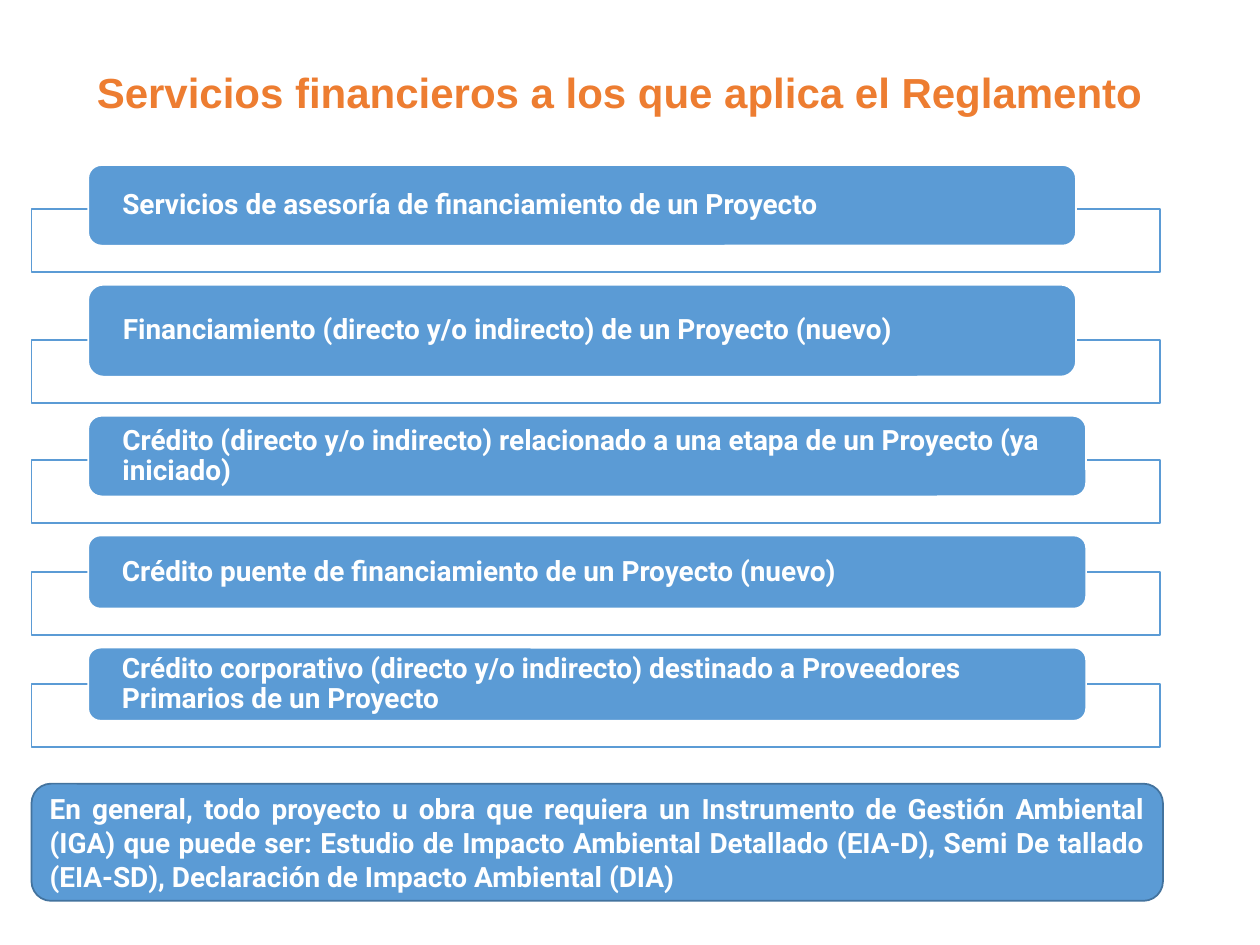
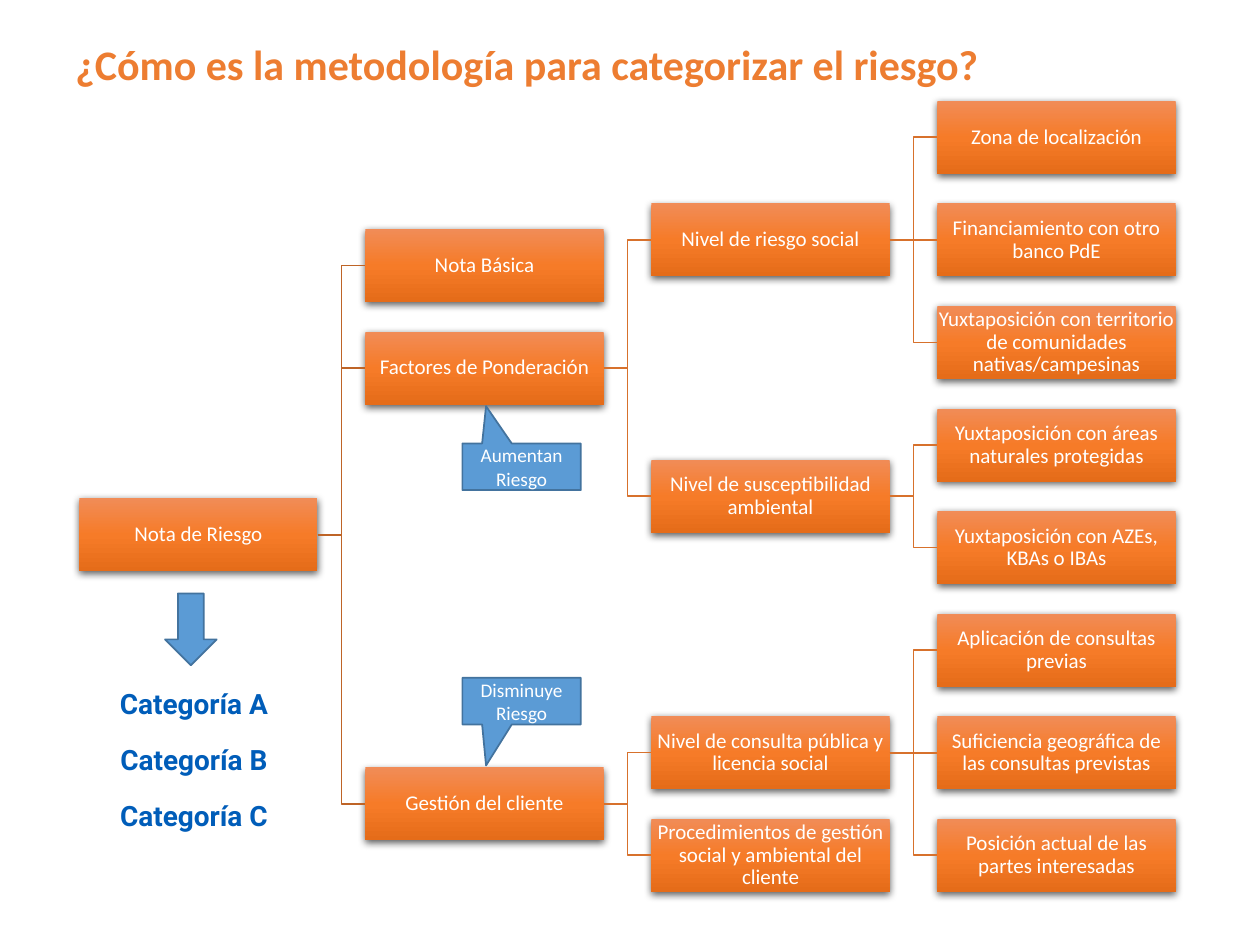
from copy import deepcopy

from lxml.etree import SubElement
from pptx import Presentation
from pptx.dml.color import RGBColor
from pptx.enum.shapes import MSO_CONNECTOR as Link, MSO_SHAPE as Shape
from pptx.enum.text import MSO_ANCHOR as Anchor, PP_ALIGN as Align
from pptx.oxml.ns import qn
from pptx.util import Inches, Pt

COLORS = {
    "title": "ED7D31", "blue": "5B9BD5", "blue_edge": "43739E",
    "white": "FFFFFF", "category": "005DB9",
    "trunk": "BE6427", "branch": "D7712C",
    "node_top": "F18C57", "node_middle": "F67B28", "node_bottom": "E56C19",
}

FORMATS = {
    "title": {"name": "Arial", "size": 24, "bold": True, "color": "title"},
    "title_tree": {"name": "Calibri", "size": 24, "bold": True, "color": "title"},
    "service": {"name": "Roboto", "size": 16, "bold": True, "color": "white"},
    "node": {"name": "Calibri", "size": 12, "bold": False, "color": "white"},
    "callout": {"name": "Calibri", "size": 11, "bold": False, "color": "white"},
    "category": {"name": "Roboto", "size": 16, "bold": True, "color": "category"},
}


def color(key):
    return RGBColor.from_string(COLORS[key])


class Deck:
    """Holds the style and the current slide; lengths are cells of a 100 x 75 grid."""

    def __init__(self):
        self.prs = Presentation()
        self.prs.slide_width, self.prs.slide_height = Inches(10), Inches(7.5)
        self.cell = self.prs.slide_width / 100

    def cells(self, *lengths):
        return [round(length * self.cell) for length in lengths]

    def new_slide(self, title, area, style="title"):
        self.slide = self.prs.slides.add_slide(self.prs.slide_layouts[6])
        self.label(title, area, style, line_spacing=0.9)

    def put_text(self, holder, text, style, align=Align.LEFT, line_spacing=1.0,
                 anchor=Anchor.MIDDLE, insets=(1, 0.5)):
        frame = holder.text_frame
        side, edge = self.cells(*insets)
        layout = {"word_wrap": True, "vertical_anchor": anchor,
                  "margin_left": side, "margin_right": side,
                  "margin_top": edge, "margin_bottom": edge}
        for key, value in layout.items():
            setattr(frame, key, value)
        paragraph = frame.paragraphs[0]
        paragraph.alignment, paragraph.line_spacing = align, line_spacing
        run = paragraph.add_run()
        run.text = text
        look = dict(FORMATS[style])
        run.font.color.rgb = color(look.pop("color"))
        look["size"] = Pt(look["size"])
        for key, value in look.items():
            setattr(run.font, key, value)

    def label(self, text, area, style, **layout):
        box = self.slide.shapes.add_textbox(*self.cells(*area))
        self.put_text(box, text, style, anchor=Anchor.TOP, **layout)

    def block(self, kind, area, fill="blue", edge="blue_edge", adjust=()):
        block = self.slide.shapes.add_shape(kind, *self.cells(*area))
        block.shadow.inherit = False
        block.fill.solid()
        block.fill.fore_color.rgb = color(fill)
        block.line.color.rgb = color(edge)
        block.line.width = Pt(1)
        for index, value in enumerate(adjust):
            block.adjustments[index] = value
        return block

    def node(self, text, area):
        node = self.block(Shape.RECTANGLE, area)
        node.line.fill.background()
        # Three-step vertical gradient
        node.fill.gradient()
        node.fill.gradient_angle = 270
        properties = node._element.spPr
        stops = next(properties.iter(qn("a:gsLst")))
        stops.insert(1, deepcopy(stops[0]))
        steps = zip(node.fill.gradient_stops, (0, 0.5, 1),
                    ("node_top", "node_middle", "node_bottom"))
        for stop, position, key in steps:
            stop.position = position
            stop.color.rgb = color(key)
        # Soft shadow below
        shadow = SubElement(properties.find(qn("a:effectLst")), qn("a:outerShdw"),
                            blurRad=str(Pt(4.5)), dist=str(Pt(1.5)), dir="5400000",
                            algn="ctr", rotWithShape="0")
        black = SubElement(shadow, qn("a:srgbClr"), val="000000")
        SubElement(black, qn("a:alpha"), val="63000")
        self.put_text(node, text, "node", align=Align.CENTER, line_spacing=0.9,
                      insets=(0.1, 0.1))
        return node

    def link(self, parent, child, key, level):
        kind = Link.STRAIGHT if level else Link.ELBOW
        line = self.slide.shapes.add_connector(kind, 0, 0, 0, 0)
        line.begin_connect(parent, 3)
        line.end_connect(child, 1)
        line.line.color.rgb = color(key)
        line.line.width = Pt(1)
        SubElement(line._element.spPr, qn("a:effectLst"))

    def tree(self, branch, depth=0):
        """Draws a branch; a parent stands midway between its outer children."""
        text, content = branch
        if isinstance(content, list):
            children = [self.tree(child, depth + 1) for child in content]
            row = (children[0][1] + children[-1][1]) / 2
        else:
            children, row = [], content
        node = self.node(text, (6.3 + 22.7 * depth, 8 + 8.14 * row, 18.9, 5.8))
        for child, child_row in children:
            self.link(node, child, "branch" if depth else "trunk", child_row == row)
        return node, row


# Each service: text, bar width, bar height
SERVICES = [
    ("Servicios de asesoría de financiamiento de un Proyecto", 78.4, 6.4),
    ("Financiamiento (directo y/o indirecto) de un Proyecto (nuevo)", 78.4, 7.3),
    ("Crédito (directo y/o indirecto) relacionado a una etapa de un Proyecto "
     "(ya iniciado)", 79.2, 6.4),
    ("Crédito puente de financiamiento de un Proyecto (nuevo)", 79.2, 5.8),
    ("Crédito corporativo (directo y/o indirecto) destinado a Proveedores "
     "Primarios de un Proyecto", 79.2, 5.8),
]

# Each branch: text and its children, or its row in the tree
RISK_TREE = ("Nota de Riesgo", [
    ("Nota Básica", 1.25),
    ("Factores de Ponderación", [
        ("Nivel de riesgo social", [
            ("Zona de localización", 0),
            ("Financiamiento con otro banco PdE", 1),
            ("Yuxtaposición con territorio de comunidades nativas/campesinas", 2),
        ]),
        ("Nivel de susceptibilidad ambiental", [
            ("Yuxtaposición con áreas naturales protegidas", 3),
            ("Yuxtaposición con AZEs, KBAs o IBAs", 4),
        ]),
    ]),
    ("Gestión del cliente", [
        ("Nivel de consulta pública y licencia social", [
            ("Aplicación de consultas previas", 5),
            ("Suficiencia geográfica de las consultas previstas", 6),
            ("Posición actual de las partes interesadas", 7),
        ]),
        ("Procedimientos de gestión social y ambiental del cliente", 7),
    ]),
])


def services_slide(deck):
    deck.new_slide("Servicios financieros a los que aplica el Reglamento",
                   (6.7, 5.2, 91, 7.1))

    # Service bars, each over its open frame
    top = 13.1
    for service, width, height in SERVICES:
        bottom = top + height
        deck.block(Shape.RECTANGLE, (2.5, bottom - 2.9, 89.6, 5), "white", "blue")
        bar = deck.block(Shape.ROUNDED_RECTANGLE, (7, top, width, height), edge="white")
        deck.put_text(bar, service, "service", line_spacing=0.9, insets=(2.4, 0))
        top = bottom + 3.1

    # General rule
    rule = deck.block(Shape.ROUNDED_RECTANGLE, (2.5, 62.2, 89.8, 9.3))
    deck.put_text(rule, "En general, todo proyecto u obra que requiera un Instrumento "
                  "de Gestión Ambiental (IGA) que puede ser: Estudio de Impacto "
                  "Ambiental Detallado (EIA-D), Semi De tallado (EIA-SD), Declaración "
                  "de Impacto Ambiental (DIA)", "service", align=Align.JUSTIFY)


def risk_slide(deck):
    deck.new_slide("¿Cómo es la metodología para categorizar el riesgo?",
                   (5, 3, 90, 12.5), "title_tree")
    deck.tree(RISK_TREE)

    # Effects on the risk
    for effect, top, tip in (("Aumentan Riesgo", 35.2, -1.3),
                             ("Disminuye Riesgo", 53.8, 1.38)):
        callout = deck.block(Shape.RECTANGULAR_CALLOUT, (36.7, top, 9.4, 3.7),
                             adjust=(-0.3, tip))
        deck.put_text(callout, effect, "callout", align=Align.CENTER)

    # Resulting categories
    deck.block(Shape.DOWN_ARROW, (13.1, 47.1, 4.1, 5.7))
    for index, letter in enumerate("ABC"):
        deck.label(f"Categoría {letter}", (7.6, 54 + 4.45 * index, 15.6, 3.7),
                   "category", align=Align.CENTER)


def main():
    deck = Deck()
    services_slide(deck)
    risk_slide(deck)
    deck.prs.save("out.pptx")


if __name__ == "__main__":
    main()
